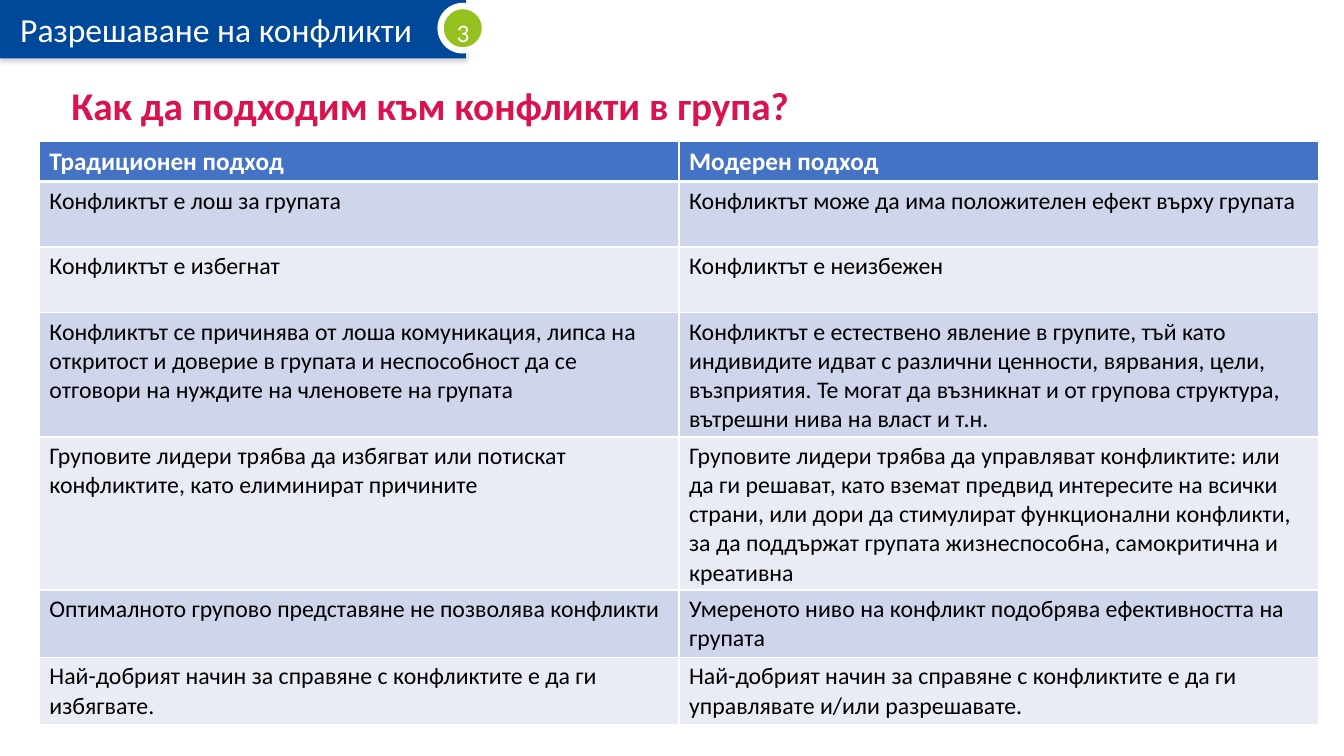
from dataclasses import dataclass
from lxml.etree import SubElement
from pptx import Presentation
from pptx.dml.color import RGBColor
from pptx.enum.shapes import MSO_SHAPE
from pptx.enum.text import MSO_ANCHOR, PP_ALIGN
from pptx.oxml import parse_xml
from pptx.oxml.ns import nsdecls, qn
from pptx.util import Inches, Pt


@dataclass(frozen=True)
class Theme:
    font: str = "Calibri"
    white: str = "FFFFFF"
    black: str = "000000"
    navy: str = "004899"
    green: str = "95C11F"
    red: str = "D8134D"
    head: str = "4472C4"
    bands: tuple = ("CFD5EA", "E9EBF5")
    shade: str = "808080"
    banner: int = 24
    title: int = 28
    label: int = 18
    body: int = 17


class Page:
    def __init__(self, slide, theme):
        self.slide = slide
        self.theme = theme

    def style(self, frame, text, size, color, bold=False, space=None):
        frame.word_wrap = True
        para = frame.paragraphs[0]
        para.text = text
        para.alignment = PP_ALIGN.LEFT
        para.line_spacing = space
        font = para.font
        font.name, font.size, font.bold = self.theme.font, Pt(size), bold
        font.color.rgb = RGBColor.from_string(color)

    def shape(self, kind, box, fill, line=None, width=0):
        shape = self.slide.shapes.add_shape(kind, *map(Inches, box))
        shape.shadow.inherit = False
        shape.fill.solid()
        shape.fill.fore_color.rgb = RGBColor.from_string(fill)
        if line:
            shape.line.color.rgb = RGBColor.from_string(line)
            shape.line.width = Pt(width)
        else:
            shape.line.fill.background()
        return shape

    def shadow(self, shape):
        effects = shape._element.spPr.find(qn("a:effectLst"))
        effects.append(parse_xml(
            f'<a:outerShdw {nsdecls("a")} blurRad="{Pt(3.1)}" dist="{Pt(1.8)}" '
            f'dir="5400000" rotWithShape="0"><a:srgbClr val="{self.theme.shade}">'
            '<a:alpha val="35000"/></a:srgbClr></a:outerShdw>'))

    def text(self, box, text, size, color, bold=False, space=None,
             anchor=MSO_ANCHOR.TOP):
        frame = self.slide.shapes.add_textbox(*map(Inches, box)).text_frame
        frame.vertical_anchor = anchor
        self.style(frame, text, size, color, bold, space)

    def border(self, cell, top, base):
        props = cell._tc.get_or_add_tcPr()
        for i, (side, width) in enumerate(zip("LRTB", (1, 1, top, base))):
            line = SubElement(props, qn(f"a:ln{side}"), w=str(Pt(width)))
            fill = SubElement(line, qn("a:solidFill"))
            SubElement(fill, qn("a:srgbClr"), val=self.theme.white)
            props.insert(i, line)  # borders come before the fill

    def table(self, box, rows, heights):
        theme = self.theme
        table = self.slide.shapes.add_table(
            len(rows), len(rows[0]), *map(Inches, box)).table
        for r, (row, height) in enumerate(zip(rows, heights)):
            table.rows[r].height = Inches(height)
            head = r == 0
            fill = theme.head if head else theme.bands[(r - 1) % 2]
            size = theme.label if head else theme.body
            color = theme.white if head else theme.black
            for c, text in enumerate(row):
                cell = table.cell(r, c)
                cell.fill.solid()
                cell.fill.fore_color.rgb = RGBColor.from_string(fill)
                self.border(cell, 3 if r == 1 else 1, 3 if head else 1)
                self.style(cell.text_frame, text, size, color, head)


ROWS = [
    ("Традиционен подход", "Модерен подход"),
    ("Конфликтът е лош за групата",
     "Конфликтът може да има положителен ефект върху групата"),
    ("Конфликтът е избегнат", "Конфликтът е неизбежен"),
    ("Конфликтът се причинява от лоша комуникация, липса на откритост и "
     "доверие в групата и неспособност да се отговори на нуждите на "
     "членовете на групата",
     "Конфликтът е естествено явление в групите, тъй като индивидите идват "
     "с различни ценности, вярвания, цели, възприятия. Те могат да "
     "възникнат и от групова структура, вътрешни нива на власт и т.н."),
    ("Груповите лидери трябва да избягват или потискат конфликтите, като "
     "елиминират причините",
     "Груповите лидери трябва да управляват конфликтите: или да ги решават, "
     "като вземат предвид интересите на всички страни, или дори да "
     "стимулират функционални конфликти, за да поддържат групата "
     "жизнеспособна, самокритична и креативна"),
    ("Оптималното групово представяне не позволява конфликти",
     "Умереното ниво на конфликт подобрява ефективността на групата"),
    ("Най-добрият начин за справяне с конфликтите е да ги избягвате.",
     "Най-добрият начин за справяне с конфликтите е да ги управлявате "
     "и/или разрешавате."),
]
HEIGHTS = (0.37, 0.65, 0.65, 1.21, 1.49, 0.65, 0.65)


def main():
    deck = Presentation()
    deck.slide_width, deck.slide_height = Inches(13.33), Inches(7.5)
    theme = Theme()
    page = Page(deck.slides.add_slide(deck.slide_layouts[6]), theme)

    # Banner
    banner = page.shape(MSO_SHAPE.RECTANGLE, (0, 0, 4.62, 0.58), theme.navy)
    page.shadow(banner)
    frame = banner.text_frame
    frame.margin_left = Inches(0.2)
    frame.vertical_anchor = MSO_ANCHOR.MIDDLE
    page.style(frame, "Разрешаване на конфликти", theme.banner, theme.white)

    # Number badge
    page.shape(MSO_SHAPE.OVAL, (4.37, 0.06, 0.44, 0.44), theme.green,
               theme.white, 4.5)
    page.text((4.43, -0.03, 0.35, 0.51), "3", theme.label, theme.white,
              space=1.5)

    # Title
    page.text((0.61, 0.74, 12.1, 0.66),
              "Как да подходим към конфликти в група?", theme.title,
              theme.red, True, 0.9, MSO_ANCHOR.MIDDLE)

    # Comparison of approaches
    page.table((0.39, 1.4, 12.69, sum(HEIGHTS)), ROWS, HEIGHTS)

    deck.save("out.pptx")


if __name__ == "__main__":
    main()
